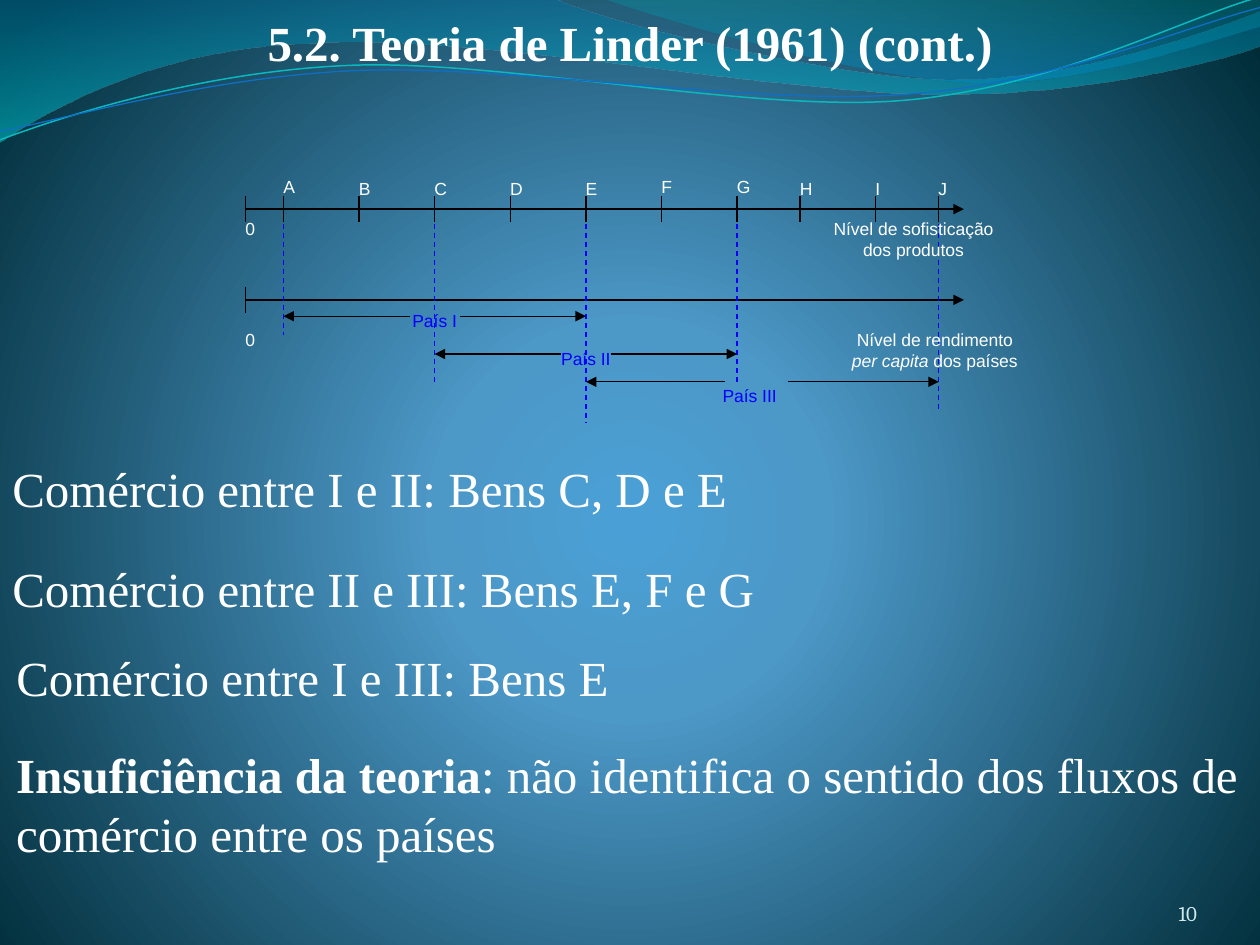
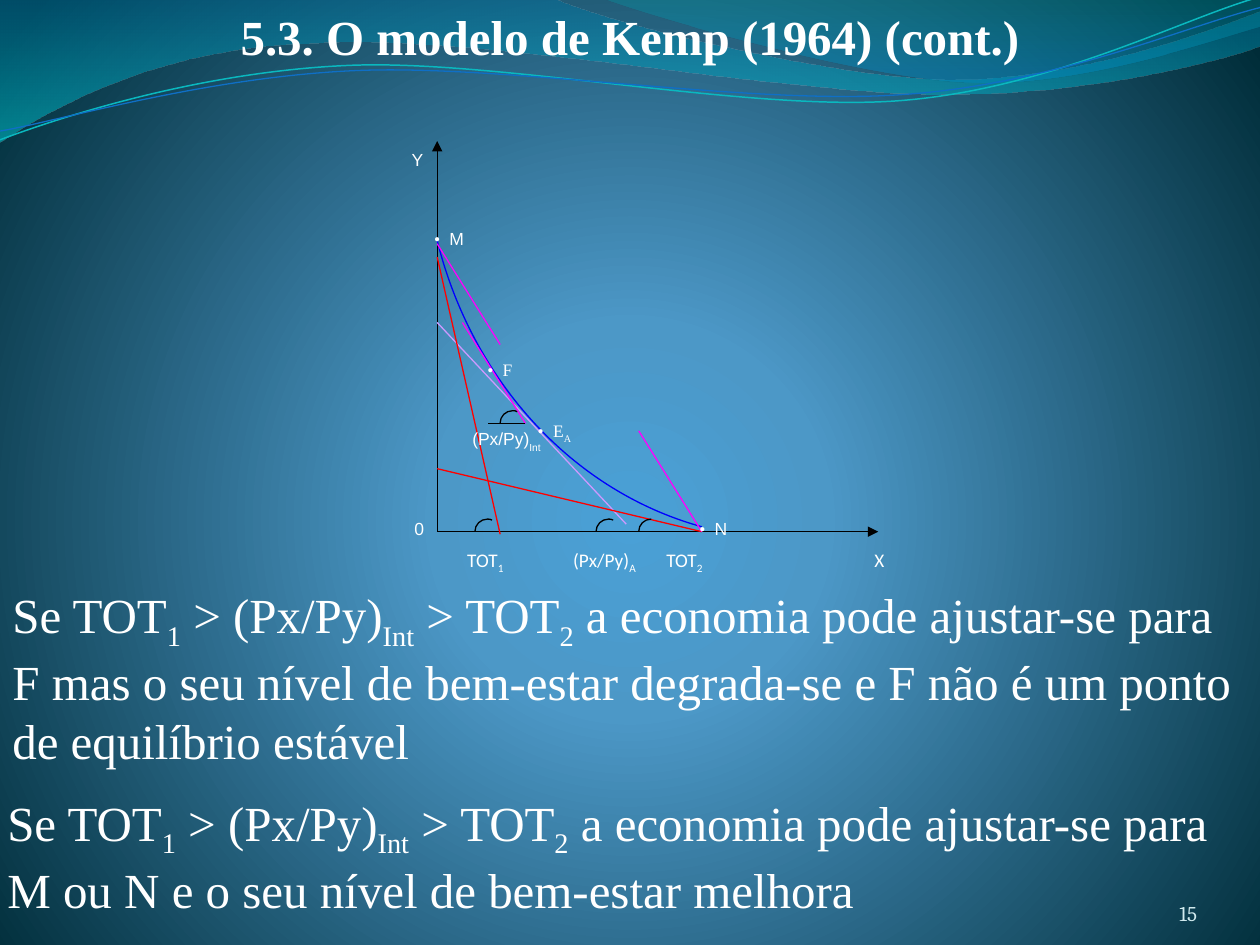
from lxml import etree
from pptx import Presentation
from pptx import util as u
from pptx.dml import color
from pptx.enum import dml, shapes, text
from pptx.oxml import ns

Pt = u.Pt
WHITE, BLACK, BLUE = "FFFFFF", "000000", "0000FF"
RED, MAGENTA, LILAC = "FF0000", "FF00FF", "CC99FF"
SERIF, SANS, LABEL, NUMBER = "Times New Roman", "Arial", "Calibri", "Cambria"
LEFT, CENTER, RIGHT = text.PP_ALIGN.LEFT, text.PP_ALIGN.CENTER, text.PP_ALIGN.RIGHT
TOP, MIDDLE, BOTTOM = (text.MSO_ANCHOR.TOP, text.MSO_ANCHOR.MIDDLE,
                       text.MSO_ANCHOR.BOTTOM)

# Gradient stops: position, colour, opacity (all but colour in percent)
BACKDROP = [(0, "4AA0D6", 100), (25, "4C98C7", 100), (100, "002C38", 100)]

# Header waves: start, then segments of one point (line) or three (curve)
BANDS = [
    ((0, 0),
     [[(316.8, -0.7)],
      [(342.7, 12.2), (478, 45.4), (545.8, 45.4)],
      [(614.2, 45.4), (689.8, 18.7), (720, 6.5)],
      [(720.7, 25.9)],
      [(707.8, 31.7), (626.4, 54.7), (537.1, 54)],
      [(447.8, 54), (275, 20.2), (185, 24.5)],
      [(92.9, 25.9), (33.1, 59.8), (-0.7, 81.4)]],
     [(0, "0074A1", 45), (100, "00C6CF", 55)]),
    ((345, -0.7),
     [[(366.5, 7.9), (491, 44.6), (553.7, 46.8)],
      [(616.3, 49.7), (692, 23), (720, 15.1)],
      [(720, 0)]],
     [(0, "00A1A9", 30), (80, "008BBF", 45)]),
]
RIBBONS = [
    ((0, 79.9),
     [[(34.6, 67), (113.8, 41), (199.4, 37.4)],
      [(284.4, 33.8), (427, 64.1), (513.4, 57.6)],
      [(599.8, 51.1), (675.4, 10.8), (718.6, -1.4)]], "0AB8BF", 0.85),
    ((0, 74.9),
     [[(33.8, 69.1), (118, 43.9), (203.8, 40.3)],
      [(290.2, 36.7), (430, 60.5), (516.2, 54)],
      [(602, 48.2), (677.5, 15.1), (720, 4.3)]], "0F6FC6", 0.75),
]

# Condition that opens both paragraphs about the Kemp model
CONDITION = ["Se TOT", ("1", -25), " > (Px/Py)", ("Int", -25), " > TOT", ("2", -25)]


def rgb(value):
    return color.RGBColor.from_string(value)


def paint_gradient(fill, element, stops, angle=None):
    """Linear gradient at an angle, or a circular one when there is none."""
    fill.gradient()
    gradient = element.find(".//" + ns.qn("a:gradFill"))
    for child in list(gradient):
        gradient.remove(child)
    stop_list = etree.SubElement(gradient, ns.qn("a:gsLst"))
    for position, value, opacity in stops:
        stop = etree.SubElement(stop_list, ns.qn("a:gs"), pos=str(position * 1000))
        tint = etree.SubElement(stop, ns.qn("a:srgbClr"), val=value)
        if opacity < 100:
            etree.SubElement(tint, ns.qn("a:alpha"), val=str(opacity * 1000))
    if angle is None:
        circle = etree.SubElement(gradient, ns.qn("a:path"))
        circle.set("path", "circle")
        etree.SubElement(circle, ns.qn("a:fillToRect"),
                         l="10000", t="110000", r="10000", b="100000")
    else:
        etree.SubElement(gradient, ns.qn("a:lin"), ang=str(angle * 60000), scaled="0")


def add_outline(page, start, segments, line=None, width=0.75, stops=None):
    """Freeform of straight and Bézier segments, closed when it has a gradient."""
    builder = page.shapes.build_freeform(Pt(start[0]), Pt(start[1]))
    points = [(Pt(x), Pt(y)) for segment in segments for x, y in segment]
    builder.add_line_segments(points, close=stops is not None)
    shape = builder.convert_to_shape()
    shape.shadow.inherit = False

    # Join each run of three points into one curve
    outline = shape.element.find(".//" + ns.qn("a:path"))
    nodes = iter(outline.findall(ns.qn("a:lnTo")))
    for segment in segments:
        first, *others = [next(nodes) for _ in segment]
        if others:
            first.tag = ns.qn("a:cubicBezTo")
        for node in others:
            first.append(node[0])
            outline.remove(node)

    if stops:
        paint_gradient(shape.fill, shape.element, stops, 90)
    else:
        shape.fill.background()
    if line:
        shape.line.color.rgb = rgb(line)
        shape.line.width = Pt(width)
    else:
        shape.line.fill.background()


def add_line(page, start, end, line=BLACK, dashed=False, arrow=False):
    connector = page.shapes.add_connector(
        shapes.MSO_CONNECTOR.STRAIGHT, *[Pt(value) for value in (*start, *end)])
    connector.line.color.rgb = rgb(line)
    connector.line.width = Pt(0.75)
    if dashed:
        connector.line.dash_style = dml.MSO_LINE.DASH
    properties = connector.element.spPr
    if arrow:
        etree.SubElement(properties.find(ns.qn("a:ln")), ns.qn("a:tailEnd"),
                         type="triangle")
    etree.SubElement(properties, ns.qn("a:effectLst"))


def add_text(page, left, top, width, height, spans, size=10, face=SANS, ink=WHITE,
             align=LEFT, anchor=TOP, wrap=True, grow=False, inset=True):
    """Spans are strings or (string, style): "bold", "italic" or a baseline shift."""
    box = page.shapes.add_textbox(Pt(left), Pt(top), Pt(width), Pt(height))
    frame = box.text_frame
    frame.word_wrap = wrap
    frame.vertical_anchor = anchor
    if grow:
        frame.auto_size = text.MSO_AUTO_SIZE.SHAPE_TO_FIT_TEXT
    if not inset:
        frame.margin_left = frame.margin_right = 0
        frame.margin_top = frame.margin_bottom = 0
    para = frame.paragraphs[0]
    para.alignment = align
    for item in spans:
        content, style = (item, None) if isinstance(item, str) else item
        span = para.add_run()
        span.text = content
        font = span.font
        font.name, font.size = face, Pt(size)
        font.color.rgb = rgb(ink)
        if style == "bold":
            font.bold = True
        elif style == "italic":
            font.italic = True
        elif style:
            properties = box.element.findall(".//" + ns.qn("a:rPr"))[-1]
            properties.set("baseline", str(style * 1000))


def add_statement(page, left, top, width, height, spans, wrap=True):
    add_text(page, left, top, width, height, spans, 28, SERIF,
             anchor=MIDDLE, wrap=wrap, grow=True)


def add_point(page, left, top, spans, face):
    """Bullet on the curve with its name to the right."""
    add_text(page, left, top, 43.2, 28.8, ["•"], face=SERIF)
    add_text(page, left + 8.8, top, 43.2, 28.8, spans, face=face)


def add_angle(page, left, base, hooked=True):
    """Arc that marks the angle between a price line and the horizontal."""
    top = base - 7.2
    segments = [[(left, base - 4), (left + 3.2, top), (left + 7.2, top)]]
    if hooked:
        segments.append([(left + 8, top), (left + 9, top), (left + 9.8, top + 0.6)])
    add_outline(page, (left, base), segments, BLACK)


def new_page(deck, title, title_top, number):
    page = deck.slides.add_slide(deck.slide_layouts[6])
    paint_gradient(page.background.fill, page.element, BACKDROP)
    for start, segments, stops in BANDS:
        add_outline(page, start, segments, stops=stops)
    for start, segments, line, width in RIBBONS:
        add_outline(page, start, segments, line, width)
    add_text(page, 0, title_top, 720, 41, [(title, "bold")], 28, SERIF,
             align=CENTER, grow=True)
    add_text(page, 624.2, 500.4, 59.8, 28.8, [number], 12, NUMBER, "D1EAEE",
             RIGHT, BOTTOM, inset=False)
    return page


def draw_linder(page):
    origin, tip, goods_y, income_y, half_tick = 140.4, 550.8, 119.5, 171.4, 7.2
    goods = {letter: 162 + 43.2 * step for step, letter in enumerate("ABCDEFG")}
    goods.update(H=457.2, I=500.4, J=536.4)

    # Axes with their origins
    for y, zero_top in ((goods_y, 121), (income_y, 184.3)):
        add_line(page, (origin, y), (tip, y), arrow=True)
        add_line(page, (origin, y - half_tick), (origin, y + half_tick))
        add_text(page, origin - 7.2, zero_top, 28.8, 21.6, ["0"])

    # Limits of each country's range, then the goods
    for letter, bottom in dict(A=191.5, C=220.3, E=241.9, G=220.3, J=234.7).items():
        add_line(page, (goods[letter], goods_y - half_tick), (goods[letter], bottom),
                 BLUE, dashed=True)
    for letter, x in goods.items():
        add_line(page, (x, goods_y - half_tick), (x, goods_y + half_tick))
        add_text(page, x - 7.2, 97.2 if letter in "AFG" else 97.9, 28.8, 21.6, [letter])

    # Axis names
    add_text(page, 464.4, 121, 115.2, 28.8, ["Nível de sofisticação dos produtos"],
             align=CENTER)
    add_text(page, 476.6, 184.3, 115.2, 28.8,
             ["Nível de rendimento ", ("per capita", "italic"), " dos países"],
             align=CENTER)

    # Countries: range of goods, arrow height, gap in the arrow, label corner
    for name, first, last, y, gap, label in (
            ("País I", "A", "E", 180.7, (234, 262.8), (219.6, 173.5)),
            ("País II", "C", "G", 202.3, (320.4, 349.2), (306, 195.1)),
            ("País III", "E", "J", 218.2, (414, 450), (399.6, 216.7))):
        add_text(page, *label, 57.6, 21.6, [name], ink=BLUE, align=CENTER)
        for inner, letter in zip(gap, (first, last)):
            add_line(page, (inner, y), (goods[letter], y), arrow=True)


def draw_kemp(page):
    x0, y0, x_n = 249.84, 303.84, 401.04

    # Axes, transformation curve and price lines
    add_line(page, (x0, y0), (x0, 80.64), arrow=True)
    add_line(page, (x0, y0), (501.84, y0), arrow=True)
    add_outline(page, (x_n, 301), [[(327.6, 280.8), (270, 218.2), (x0, 137.5)]], BLUE)
    add_line(page, (x0, 184.3), (357.84, 299.5), LILAC)
    add_line(page, (x_n, y0), (x0, 267.84), RED)
    add_line(page, (x0, 146.9), (285.84, 305.3), RED)
    for x, y in ((264.24, 184.3), (x0, 139.3), (365.04, 246.24)):
        add_line(page, (x, y), (x + 36, y + 57.6), MAGENTA)

    # Angles
    add_line(page, (300.24, 241.9), (278.64, 241.9))
    add_angle(page, 365, y0, hooked=False)
    for left, base in ((340.6, y0), (271.4, y0), (285.8, 241.9)):
        add_angle(page, left, base)

    # Points on the curve
    add_point(page, 241, 126.7, ["M"], SANS)
    add_point(page, 392.5, 292.3, ["N"], SANS)
    add_point(page, 271.4, 201.6, ["F"], SERIF)
    add_point(page, 300.2, 236.2, ["E", ("A", -30)], SERIF)

    # Axis and price labels
    add_text(page, 228.2, 81.4, 43.2, 28.8, ["Y"])
    add_text(page, 229.7, 292.3, 43.2, 28.8, ["0"])
    add_text(page, 262.8, 241.2, 57.6, 28.8, ["(Px/Py)", ("Int", -30)])
    for left, spans in ((259.9, ["TOT", ("1", -25)]), (320.4, ["(Px/Py)", ("A", -25)]),
                        (373.7, ["TOT", ("2", -25)]), (492.5, ["X"])):
        add_text(page, left, 309.6, 56.9, 28.8, spans, 11, LABEL)


def main():
    deck = Presentation()
    deck.slide_width, deck.slide_height = Pt(720), Pt(540)

    # Linder
    page = new_page(deck, "5.2. Teoria de Linder (1961) (cont.)", 3.6, "10")
    draw_linder(page)
    for left, top, width, line in (
            (0, 258.5, 427, "Comércio entre I e II: Bens C, D e E"),
            (0, 315.4, 442.8, "Comércio entre II e III: Bens E, F e G"),
            (2.2, 366.5, 370.8, "Comércio entre I e III: Bens E")):
        add_statement(page, left, top, width, 41, [line], wrap=False)
    add_statement(page, 2.2, 421.9, 717.8, 74.9, [
        ("Insuficiência da teoria", "bold"),
        ": não identifica o sentido dos fluxos de comércio entre os países"])

    # Kemp
    page = new_page(deck, "5.3. O modelo de Kemp (1964) (cont.)", 0, "15")
    draw_kemp(page)
    add_statement(page, 0, 332.6, 720, 108.7, CONDITION + [
        " a economia pode ajustar-se para F mas o seu nível de bem-estar degrada-se"
        " e F não é um ponto de equilíbrio estável"])
    add_statement(page, -2.9, 451.4, 720, 74.9, CONDITION + [
        " a economia pode ajustar-se para M ou N e o seu nível de bem-estar melhora"])

    deck.save("out.pptx")


if __name__ == "__main__":
    main()
